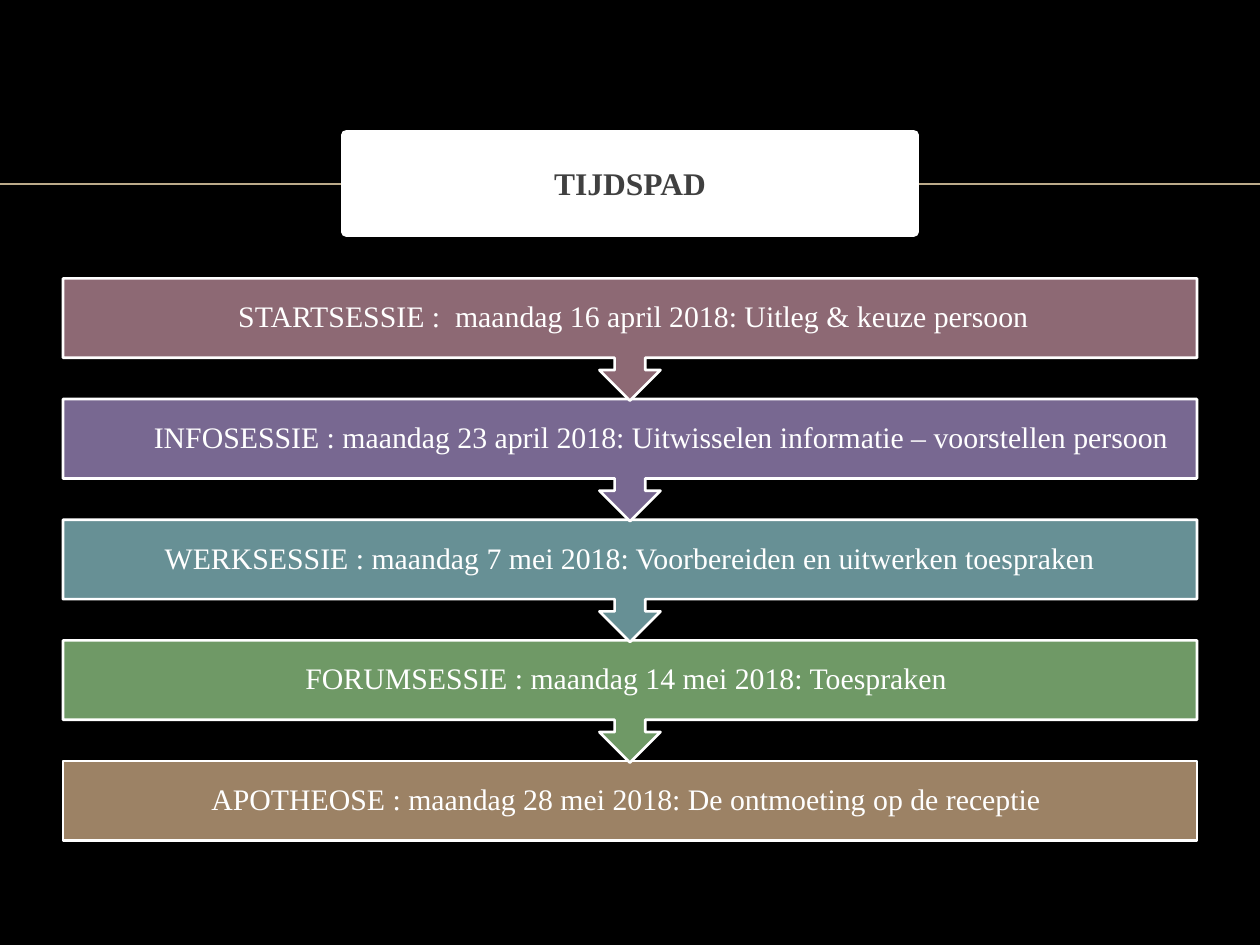
"""Build the timeline slide with five linked sessions."""
from lxml.etree import SubElement
from pptx import Presentation
from pptx.dml.color import RGBColor
from pptx.enum.shapes import MSO_CONNECTOR, MSO_SHAPE
from pptx.enum.text import MSO_ANCHOR, MSO_AUTO_SIZE, PP_ALIGN
from pptx.oxml.ns import qn
from pptx.util import Inches, Pt

TITLE = "TIJDSPAD"
STEPS = [
    (" STARTSESSIE :  maandag 16 april 2018: Uitleg & keuze persoon", "rose"),
    ("\tINFOSESSIE : maandag 23 april 2018: Uitwisselen informatie – voorstellen persoon", "purple"),
    ("WERKSESSIE : maandag 7 mei 2018: Voorbereiden en uitwerken toespraken", "teal"),
    ("FORUMSESSIE : maandag 14 mei 2018: Toespraken ", "green"),
    ("APOTHEOSE : maandag 28 mei 2018: De ontmoeting op de receptie ", "brown"),
]
HUES = {
    "black": "000000", "white": "FFFFFF", "grey": "404040", "sand": "BBAA8A",
    "rose": "8D6974", "purple": "786891", "teal": "679095",
    "green": "6F9966", "brown": "9C8265",
}
LEFT, WIDTH = 0.5, 9
FIRST, LAST = 2.21, 6.04
BOX, CALLOUT = 0.63, 0.97
PAD = Inches(0.13)
FRAME = {
    "word_wrap": True, "auto_size": MSO_AUTO_SIZE.NONE,
    "vertical_anchor": MSO_ANCHOR.MIDDLE,
}
INSET = {f"margin_{side}": PAD for side in ("left", "top", "right", "bottom")}
STEP_FONT = {"name": "Times New Roman", "size": Pt(17), "bold": False}
HEAD_FONT = {"name": "Times New Roman", "size": Pt(18), "bold": True}


def apply(item, values):
    for name, value in values.items():
        setattr(item, name, value)


def color(name):
    return RGBColor.from_string(HUES[name])


def paint(shape, fill, weight):
    shape.fill.solid()
    shape.fill.fore_color.rgb = color(fill)
    shape.line.color.rgb = color("white")
    shape.line.width = Pt(weight)


def write(shape, text, font, hue, frame, para):
    apply(shape.text_frame, frame)
    line = shape.text_frame.paragraphs[0]
    apply(line, {"alignment": PP_ALIGN.CENTER, **para})
    run = line.add_run()
    run.text = text
    apply(run.font, font)
    run.font.color.rgb = color(hue)


def add_rule(slide):
    rule = slide.shapes.add_connector(
        MSO_CONNECTOR.STRAIGHT, 0, Inches(1.46), Inches(10), Inches(1.46))
    rule.line.color.rgb = color("sand")
    rule.line.width = Pt(1)
    SubElement(rule._element.spPr, qn("a:effectLst"))


def add_steps(slide):
    final = len(STEPS) - 1
    pitch = (LAST - FIRST) / final
    for i, (text, hue) in reversed(list(enumerate(STEPS))):
        kind, height = ((MSO_SHAPE.RECTANGLE, BOX) if i == final
                        else (MSO_SHAPE.DOWN_ARROW_CALLOUT, CALLOUT))
        step = slide.shapes.add_shape(
            kind, Inches(LEFT), Inches(FIRST + i * pitch), Inches(WIDTH), Inches(height))
        step.shadow.inherit = False
        paint(step, hue, 1.5)
        write(step, text, STEP_FONT, "white", {**FRAME, **INSET}, {"line_spacing": 0.9})


def add_title(slide):
    title = slide.shapes.title
    apply(title, {"left": Inches(2.75), "top": Inches(1.07),
                  "width": Inches(4.5), "height": Inches(0.77)})
    paint(title, "white", 6)
    write(title, TITLE, HEAD_FONT, "grey", FRAME, {"space_before": Pt(4)})
    slide.shapes._spTree.append(title._element)


def main():
    deck = Presentation()
    apply(deck, {"slide_width": Inches(10), "slide_height": Inches(7.5)})
    slide = deck.slides.add_slide(deck.slide_layouts[5])
    slide.background.fill.solid()
    slide.background.fill.fore_color.rgb = color("black")
    add_rule(slide)
    add_steps(slide)
    add_title(slide)
    deck.save("out.pptx")


if __name__ == "__main__":
    main()
